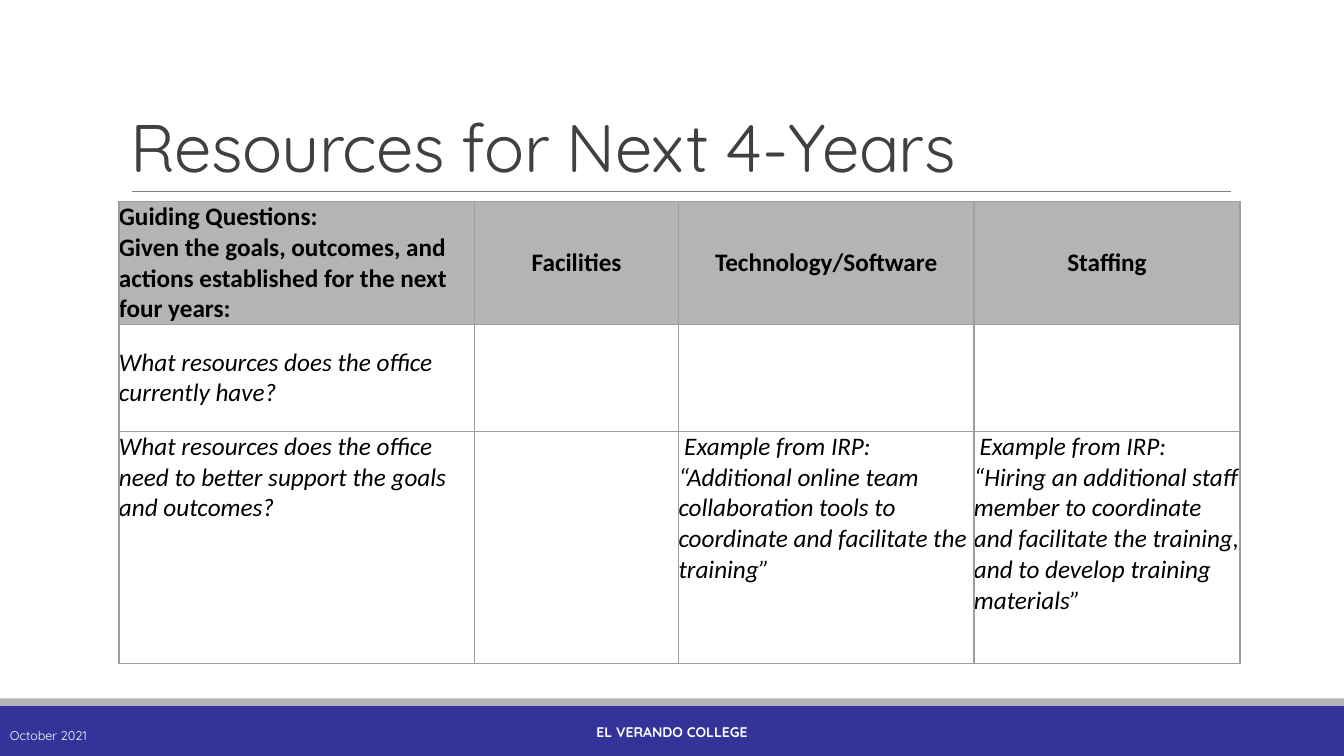
from lxml import etree
from pptx import Presentation
from pptx.dml.color import RGBColor
from pptx.enum.shapes import MSO_CONNECTOR, MSO_SHAPE
from pptx.enum.text import MSO_ANCHOR, PP_ALIGN
from pptx.oxml.ns import qn
from pptx.util import Inches, Pt

RECTANGLE = MSO_SHAPE.RECTANGLE
STRAIGHT = MSO_CONNECTOR.STRAIGHT
TOP, MIDDLE, BOTTOM = MSO_ANCHOR.TOP, MSO_ANCHOR.MIDDLE, MSO_ANCHOR.BOTTOM
LEFT, CENTER = PP_ALIGN.LEFT, PP_ALIGN.CENTER

INDIGO = RGBColor(0x33, 0x33, 0x99)
SILVER = RGBColor(0xB3, 0xB5, 0xB5)
RULE_GRAY = RGBColor(0x80, 0x80, 0x80)
BORDER_GRAY = RGBColor(0x9E, 0x9E, 0x9E)
CHARCOAL = RGBColor(0x40, 0x40, 0x40)
BLACK = RGBColor(0, 0, 0)
WHITE = RGBColor(0xFF, 0xFF, 0xFF)

SLIDE_WIDTH, SLIDE_HEIGHT = 13.33, 7.5
FOOTER_TOP, STRIPE_HEIGHT = 7, 0.07
TABLE_LEFT, TABLE_TOP = 1.18, 2
COLUMN_WIDTHS = (3.53, 2.02, 2.93, 2.64)
ROW_HEIGHTS = (1.22, 1.06, 2.3)

HEADINGS = (
    ("Guiding Questions:",
     "Given the goals, outcomes, and actions established for the next four years:"),
    ("Facilities",),
    ("Technology/Software",),
    ("Staffing",),
)
CURRENT_QUESTION = "What resources does the office currently have?"
NEEDED_QUESTION = "What resources does the office need to better support the goals and outcomes?"
EXAMPLES = {
    2: "Example from IRP: “Additional online team collaboration tools to "
       "coordinate and facilitate the training”",
    3: "Example from IRP: “Hiring an additional staff member to coordinate and "
       "facilitate the training, and to develop training materials”",
}


def add_run(paragraph, text, font, size, color, bold=False, italic=False):
    """Append one styled run and return it."""
    run = paragraph.add_run()
    run.text = text
    run.font.name = font
    run.font.size = Pt(size)
    run.font.color.rgb = color
    run.font.bold = bold
    run.font.italic = italic
    return run


def add_band(slide, top, height, color):
    """Draw a plain band across the full slide width."""
    band = slide.shapes.add_shape(
        RECTANGLE, 0, Inches(top), Inches(SLIDE_WIDTH), Inches(height))
    band.shadow.inherit = False
    band.fill.solid()
    band.fill.fore_color.rgb = color
    band.line.fill.background()


def add_title_rule(slide, left, right, y):
    """Draw the thin line under the title."""
    rule = slide.shapes.add_connector(
        STRAIGHT, Inches(left), Inches(y), Inches(right), Inches(y))
    rule.line.color.rgb = RULE_GRAY
    rule.line.width = Pt(0.5)
    etree.SubElement(rule._element.spPr, qn("a:effectLst"))


def add_label(slide, box, text, size, color, anchor=MIDDLE, align=LEFT, bold=False):
    """Place one line of text and return its paragraph and run."""
    frame = slide.shapes.add_textbox(*map(Inches, box)).text_frame
    frame.word_wrap = True
    frame.vertical_anchor = anchor
    paragraph = frame.paragraphs[0]
    paragraph.alignment = align
    return paragraph, add_run(paragraph, text, "Quicksand", size, color, bold)


def add_title(slide, text):
    """Place the slide title with tight line and letter spacing."""
    paragraph, run = add_label(slide, (1.2, 0.31, 11, 1.59), text, 48, CHARCOAL, BOTTOM)
    paragraph.line_spacing = 0.85
    run.font._element.set("spc", "-50")


def format_cell(cell, fill=None):
    """Clear the margins, outline the cell and set its fill."""
    cell.margin_left = cell.margin_right = cell.margin_top = cell.margin_bottom = 0
    properties = cell._tc.get_or_add_tcPr()
    for side in ("lnL", "lnR", "lnT", "lnB"):
        border = etree.SubElement(properties, qn(f"a:{side}"), w=str(Pt(1)))
        solid = etree.SubElement(border, qn("a:solidFill"))
        etree.SubElement(solid, qn("a:srgbClr"), val=str(BORDER_GRAY))
    if fill is None:
        cell.fill.background()
    else:
        cell.fill.solid()
        cell.fill.fore_color.rgb = fill


def write_cell(cell, lines, anchor, align=LEFT, bold=False, lead="", space_after=0):
    """Write one paragraph per line, italic unless bold."""
    cell.vertical_anchor = anchor
    frame = cell.text_frame
    for index, line in enumerate(lines):
        paragraph = frame.add_paragraph() if index else frame.paragraphs[0]
        paragraph.alignment = align
        paragraph.space_after = Pt(space_after)
        if lead:
            add_run(paragraph, lead, "Calibri", 18, BLACK)
        add_run(paragraph, line, "Calibri", 18, BLACK, bold, not bold)


def add_resource_table(slide):
    """Build the table of guiding questions against resource types."""
    table = slide.shapes.add_table(
        len(ROW_HEIGHTS), len(COLUMN_WIDTHS), Inches(TABLE_LEFT), Inches(TABLE_TOP),
        Inches(sum(COLUMN_WIDTHS)), Inches(sum(ROW_HEIGHTS))).table
    table.first_row = table.horz_banding = False
    for column, width in zip(table.columns, COLUMN_WIDTHS):
        column.width = Inches(width)
    for index, (row, height) in enumerate(zip(table.rows, ROW_HEIGHTS)):
        row.height = Inches(height)
        for cell in row.cells:
            format_cell(cell, None if index else SILVER)
    for column, lines in enumerate(HEADINGS):
        write_cell(table.cell(0, column), lines, MIDDLE, CENTER if column else LEFT, bold=True)
    write_cell(table.cell(1, 0), [CURRENT_QUESTION], MIDDLE)
    write_cell(table.cell(2, 0), [NEEDED_QUESTION], TOP, space_after=12)
    for column, example in EXAMPLES.items():
        write_cell(table.cell(2, column), [example], TOP, lead=" ", space_after=12)


def main():
    """Build the slide and save it."""
    deck = Presentation()
    deck.slide_width, deck.slide_height = Inches(SLIDE_WIDTH), Inches(SLIDE_HEIGHT)
    slide = deck.slides.add_slide(deck.slide_layouts[6])
    add_band(slide, FOOTER_TOP, SLIDE_HEIGHT - FOOTER_TOP, INDIGO)
    add_band(slide, FOOTER_TOP - STRIPE_HEIGHT, STRIPE_HEIGHT, SILVER)
    add_title_rule(slide, 1.31, 12.21, 1.9)
    add_title(slide, "Resources for Next 4-Years")
    add_label(slide, (0, 7.1, 2.7, 0.4), "October 2021", 9, WHITE)
    add_label(slide, (4.03, 7.06, 5.27, 0.4), "EL VERANDO COLLEGE", 10, WHITE,
              align=CENTER, bold=True)
    add_resource_table(slide)
    deck.save("out.pptx")


if __name__ == "__main__":
    main()
